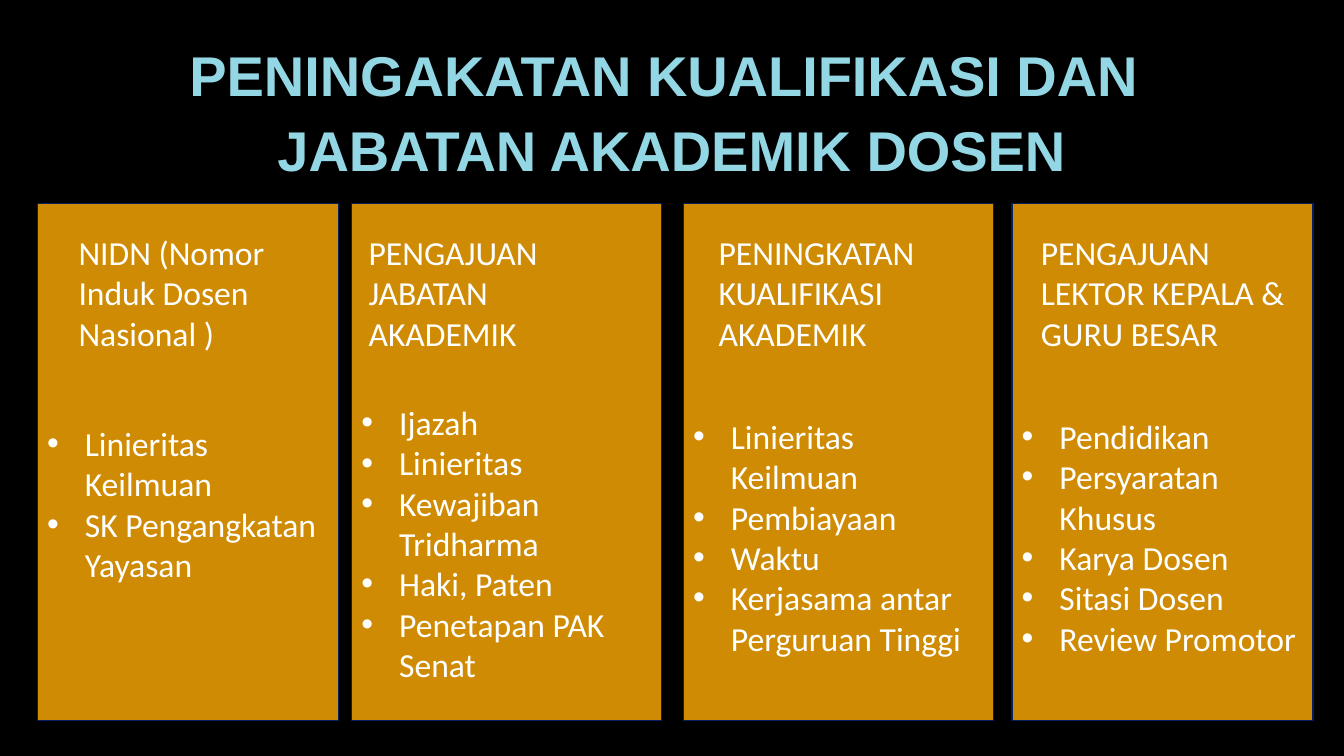
from lxml import etree
from pptx import Presentation
from pptx.dml.color import RGBColor
from pptx.enum.shapes import MSO_SHAPE
from pptx.enum.text import MSO_ANCHOR, MSO_AUTO_SIZE, PP_ALIGN
from pptx.oxml.ns import qn
from pptx.util import Cm, Pt

RECT = MSO_SHAPE.RECTANGLE
TOP, BOTTOM = MSO_ANCHOR.TOP, MSO_ANCHOR.BOTTOM
NO_FIT = MSO_AUTO_SIZE.NONE
LEFT, CENTER = PP_ALIGN.LEFT, PP_ALIGN.CENTER

TITLE = ["PENINGAKATAN KUALIFIKASI DAN ", "JABATAN AKADEMIK DOSEN"]
CARD_TOP, CARD_HEIGHT = 5.13, 13.03
HEADING_TOP, HEADING_HEIGHT = 5.72, 3.33

# card left, card width, heading left, heading width, list offset, heading, items
CARDS = [
    (0.94, 7.59, 1.73, 6.35, 5.53, "NIDN (Nomor Induk Dosen Nasional )",
     ["Linieritas Keilmuan", "SK Pengangkatan Yayasan"]),
    (8.86, 7.82, 9.04, 6.12, 5.0, "PENGAJUAN JABATAN AKADEMIK",
     ["Ijazah", "Linieritas", "Kewajiban Tridharma", "Haki, Paten",
      "Penetapan PAK Senat"]),
    (17.22, 7.82, 17.86, 6.81, 5.35, "PENINGKATAN KUALIFIKASI AKADEMIK",
     ["Linieritas Keilmuan", "Pembiayaan", "Waktu",
      "Kerjasama antar Perguruan Tinggi"]),
    (25.5, 7.59, 25.98, 6.65, 5.35, "PENGAJUAN LEKTOR KEPALA & GURU BESAR",
     ["Pendidikan", "Persyaratan Khusus", "Karya Dosen", "Sitasi Dosen",
      "Review Promotor"]),
]


def rgb(value):
    return RGBColor.from_string(value)


def add_bullet(p):
    pPr = p._p.get_or_add_pPr()
    pPr.set("marL", str(Cm(0.95)))
    pPr.set("indent", str(-Cm(0.95)))
    etree.SubElement(pPr, qn("a:buFont")).set("typeface", "Arial")
    etree.SubElement(pPr, qn("a:buChar")).set("char", "•")


class Deck:
    BACKGROUND, CARD, BORDER = "000000", "CF8B03", "002060"
    TITLE_COLOR, TEXT_COLOR = "94D7E4", "FFFFFF"
    TITLE_FONT, BODY_FONT = "Arial", "Calibri"
    TITLE_SIZE, BODY_SIZE = 40, 24

    def __init__(self, prs):
        self.slide = prs.slides.add_slide(prs.slide_layouts[5])
        fill = self.slide.background.fill
        fill.solid()
        fill.fore_color.rgb = rgb(self.BACKGROUND)

    def add_text(self, p, text, font, size, color, bold=False):
        r = p.add_run()
        r.text = text
        r.font.name = font
        r.font.size = Pt(size)
        r.font.bold = bold
        r.font.color.rgb = rgb(color)

    def paragraphs(self, tf, lines):
        """Yield each line with its paragraph, reusing the first one."""
        for i, line in enumerate(lines):
            yield (tf.add_paragraph() if i else tf.paragraphs[0]), line

    def title(self, lines, x, y, w, h):
        sp = self.slide.shapes.title
        sp.left, sp.top, sp.width, sp.height = Cm(x), Cm(y), Cm(w), Cm(h)
        tf = sp.text_frame
        tf.word_wrap = True
        tf.auto_size = NO_FIT
        tf.vertical_anchor = BOTTOM
        for p, line in self.paragraphs(tf, lines):
            p.alignment = CENTER
            p.line_spacing = 0.9
            p.space_before = Pt(10 if line != lines[0] else 0)
            self.add_text(p, line, self.TITLE_FONT, self.TITLE_SIZE,
                          self.TITLE_COLOR, bold=True)

    def card(self, items, x, y, w, h, list_offset):
        sp = self.slide.shapes.add_shape(RECT, Cm(x), Cm(y), Cm(w), Cm(h))
        sp.shadow.inherit = False
        sp.fill.solid()
        sp.fill.fore_color.rgb = rgb(self.CARD)
        sp.line.color.rgb = rgb(self.BORDER)
        sp.line.width = Pt(1)
        tf = sp.text_frame
        tf.word_wrap = True
        tf.vertical_anchor = TOP
        tf.margin_top = Cm(list_offset)
        for p, item in self.paragraphs(tf, items):
            p.alignment = LEFT
            add_bullet(p)
            self.add_text(p, item, self.BODY_FONT, self.BODY_SIZE,
                          self.TEXT_COLOR)

    def heading(self, text, x, y, w, h):
        sp = self.slide.shapes.add_textbox(Cm(x), Cm(y), Cm(w), Cm(h))
        tf = sp.text_frame
        tf.word_wrap = True
        self.add_text(tf.paragraphs[0], text, self.BODY_FONT, self.BODY_SIZE,
                      self.TEXT_COLOR)


def main():
    prs = Presentation()
    prs.slide_width, prs.slide_height = Cm(33.87), Cm(19.05)
    deck = Deck(prs)
    deck.title(TITLE, 1.57, 0.18, 30.71, 4.57)
    for x, w, heading_x, heading_w, list_offset, heading, items in CARDS:
        deck.card(items, x, CARD_TOP, w, CARD_HEIGHT, list_offset)
        deck.heading(heading, heading_x, HEADING_TOP, heading_w, HEADING_HEIGHT)
    prs.save("out.pptx")


if __name__ == "__main__":
    main()
